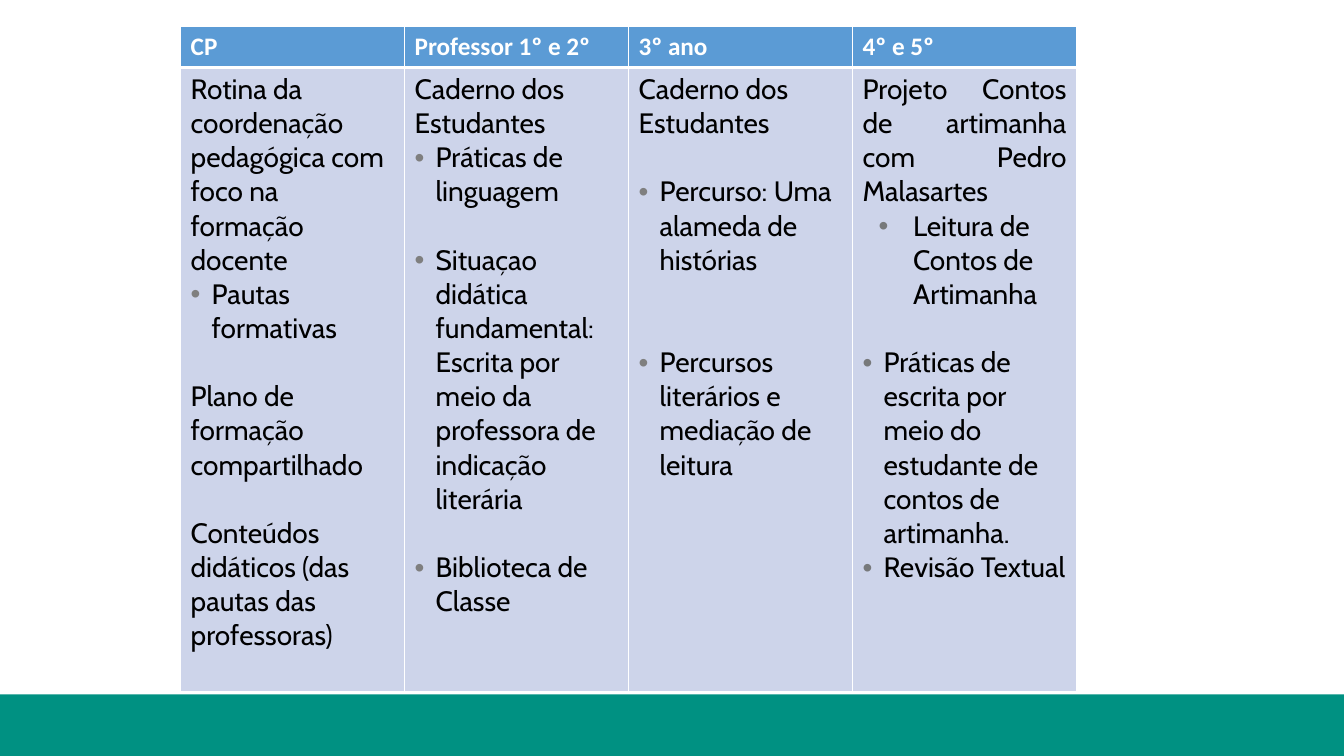
import pptx
import pptx.util
import pptx.dml.color
import pptx.enum.shapes
import pptx.enum.text
import pptx.oxml.ns
from lxml import etree

Pt = pptx.util.Pt
COLORS = {
    "band": "009182",
    "header": "5B9BD5",
    "body": "CDD4EA",
    "white": "FFFFFF",
    "black": "000000",
    "bullet": "7F7F7F",
    "bullet_projects": "77797B",
}
LINE = 24.4
NEAR = (15, -15)
FAR = (36, -24.5)
JUSTIFY = pptx.enum.text.PP_ALIGN.JUSTIFY

COLUMNS = [
    ("CP", "bullet", [
        {"text": "Rotina da coordenação pedagógica com foco na formação docente"},
        {"text": "Pautas formativas", "indent": NEAR},
        {"text": "Plano de formação compartilhado", "gap": 1},
        {"text": "Conteúdos didáticos (das pautas das professoras)", "gap": 1},
    ]),
    ("Professor 1º e 2º", "bullet", [
        {"text": "Caderno dos Estudantes"},
        {"text": "Práticas de linguagem", "indent": NEAR},
        {"text": "Situaçao didática fundamental: Escrita por meio da professora "
                 "de indicação literária", "indent": NEAR, "gap": 1},
        {"text": "Biblioteca de Classe", "indent": NEAR, "gap": 1},
    ]),
    ("3º ano", "bullet", [
        {"text": "Caderno dos Estudantes"},
        {"text": "Percurso: Uma alameda de histórias", "indent": NEAR, "gap": 1},
        {"text": "Percursos literários e mediação de leitura", "indent": NEAR, "gap": 2},
    ]),
    ("4º e 5º", "bullet_projects", [
        {"text": "Projeto Contos de artimanha com Pedro Malasartes", "align": JUSTIFY},
        {"text": "Leitura de Contos de Artimanha", "indent": FAR},
        {"text": "Práticas de escrita por meio do estudante de contos de artimanha.",
         "indent": NEAR, "gap": 1},
        {"text": "Revisão Textual", "indent": NEAR},
    ]),
]


def rgb(name):
    return pptx.dml.color.RGBColor.from_string(COLORS[name])


def add_element(parent, tag, **attributes):
    element = etree.SubElement(parent, pptx.oxml.ns.qn(tag))
    for key, value in attributes.items():
        element.set(key, str(value))
    return element


def add_band(page, left, top, width, height):
    band = page.shapes.add_shape(
        pptx.enum.shapes.MSO_SHAPE.RECTANGLE, Pt(left), Pt(top), Pt(width), Pt(height))
    band.shadow.inherit = False
    band.fill.solid()
    band.fill.fore_color.rgb = rgb("band")
    band.line.fill.background()


def style_cell(cell, fill, top, bottom):
    properties = cell._tc.get_or_add_tcPr()
    for side, width in (("L", 1), ("R", 1), ("T", top), ("B", bottom)):
        border = add_element(properties, f"a:ln{side}", w=Pt(width))
        solid = add_element(border, "a:solidFill")
        add_element(solid, "a:srgbClr", val=COLORS["white"])
    cell.fill.solid()
    cell.fill.fore_color.rgb = rgb(fill)


def set_bullet(para, indent, color):
    properties = para._p.get_or_add_pPr()
    margin, hanging = indent
    properties.set("marL", str(Pt(margin)))
    properties.set("indent", str(Pt(hanging)))
    bullet_color = add_element(properties, "a:buClr")
    add_element(bullet_color, "a:srgbClr", val=COLORS[color])
    add_element(properties, "a:buFont", typeface="Arial")
    add_element(properties, "a:buChar", char="•")


def set_font(para, name, size, color, bold):
    para.font.name = name
    para.font.size = Pt(size)
    para.font.bold = bold
    para.font.color.rgb = rgb(color)


def fill_header(cell, title):
    style_cell(cell, "header", 1, 3)
    para = cell.text_frame.paragraphs[0]
    para.text = title
    set_font(para, "Calibri", 18, "white", True)


def fill_body(cell, items, bullet_color):
    style_cell(cell, "body", 3, 1)
    frame = cell.text_frame
    for index, item in enumerate(items):
        para = frame.add_paragraph() if index else frame.paragraphs[0]
        para.text = item["text"]
        if "indent" in item:
            set_bullet(para, item["indent"], bullet_color)
        if "gap" in item:
            para.space_before = Pt(item["gap"] * LINE)
        if "align" in item:
            para.alignment = item["align"]
        set_font(para, "Cabin", 20, "black", False)


def add_plan_table(page, left, top, column_width, row_heights):
    frame = page.shapes.add_table(
        len(row_heights), len(COLUMNS), Pt(left), Pt(top),
        Pt(column_width * len(COLUMNS)), Pt(sum(row_heights)))
    table = frame.table
    table.horz_banding = False
    for row, height in zip(table.rows, row_heights):
        row.height = Pt(height)
    for index, (title, bullet_color, items) in enumerate(COLUMNS):
        table.columns[index].width = Pt(column_width)
        fill_header(table.cell(0, index), title)
        fill_body(table.cell(1, index), items, bullet_color)


def main():
    deck = pptx.Presentation()
    deck.slide_width = Pt(960)
    deck.slide_height = Pt(540)
    page = deck.slides.add_slide(deck.slide_layouts[6])
    add_band(page, 0, 496, 960, 44)
    add_plan_table(page, 129, 19, 160, (29.2, 445.5))
    deck.save("out.pptx")


if __name__ == "__main__":
    main()
